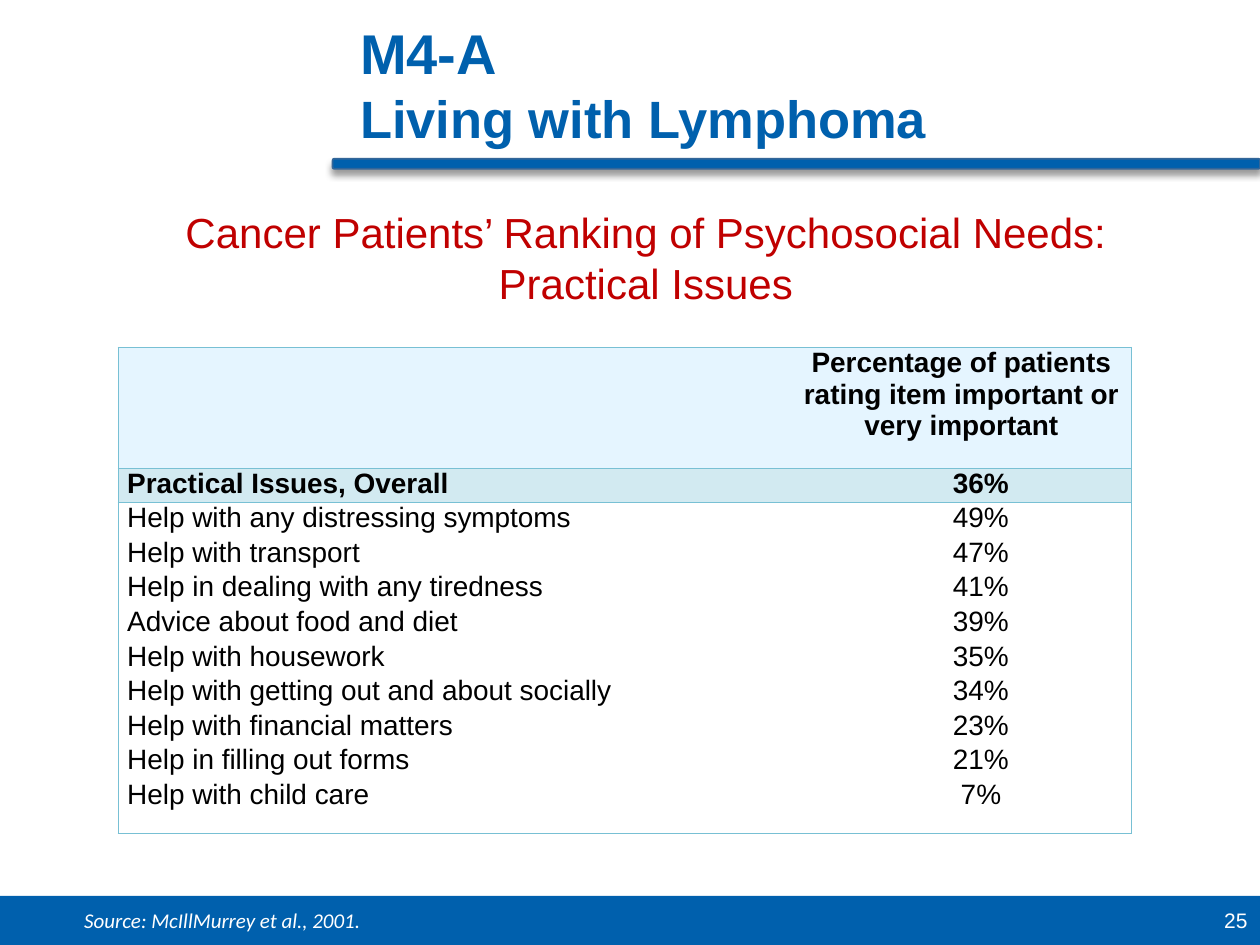
from lxml.etree import SubElement
from pptx import Presentation
from pptx.dml.color import RGBColor
from pptx.enum.shapes import MSO_SHAPE
from pptx.enum.text import MSO_ANCHOR, PP_ALIGN
from pptx.oxml.ns import qn
from pptx.util import Inches, Pt

HUES = {"blue": "0060AD", "edge": "336699", "red": "C00000", "white": "FFFFFF",
        "black": "000000", "rule": "78C0D4", "head": "E5F5FF", "band": "D2EAF1"}
NEEDS = [("Help with any distressing symptoms", "49%"), ("Help with transport", "47%"),
         ("Help in dealing with any tiredness", "41%"), ("Advice about food and diet", "39%"),
         ("Help with housework", "35%"), ("Help with getting out and about socially", "34%"),
         ("Help with financial matters", "23%"), ("Help in filling out forms", "21%"),
         ("Help with child care", "7%")]
ROWS = [("head", True, [""], ["Percentage of patients rating item important or very important"]),
        ("band", True, ["Practical Issues, Overall"], ["36%"]),
        (None, False, *zip(*NEEDS))]


def hue(name):
    return RGBColor.from_string(HUES[name])


class Deck:
    COLS, LINES = 100, 75
    FACE = {"name": "Arial", "size": 16, "color": "black", "bold": False, "italic": False}

    def __init__(self):
        self.file = Presentation()
        self.file.slide_width, self.file.slide_height = Inches(10), Inches(7.5)
        self.slide = self.file.slides.add_slide(self.file.slide_layouts[6])

    def across(self, cols):
        return int(self.file.slide_width * cols / self.COLS)

    def down(self, rows):
        return int(self.file.slide_height * rows / self.LINES)

    def place(self, x, y, w, h):
        return self.across(x), self.down(y), self.across(w), self.down(h)

    def style(self, font, **face):
        for key, val in {**self.FACE, **face}.items():
            if key == "color":
                font.color.rgb = hue(val)
            else:
                setattr(font, key, Pt(val) if key == "size" else val)

    def bar(self, box, kind=MSO_SHAPE.RECTANGLE, line=None):
        shape = self.slide.shapes.add_shape(kind, *self.place(*box))
        shape.shadow.inherit = False
        shape.fill.solid()
        shape.fill.fore_color.rgb = hue("blue")
        if line:
            shape.line.color.rgb = hue(line)
            shape.line.width = Pt(1)
        else:
            shape.line.fill.background()
        return shape

    def shade(self, shape):
        glow = shape._element.spPr.find(qn("a:effectLst"))
        cast = SubElement(glow, qn("a:outerShdw"), blurRad=str(Pt(4)), dist=str(Pt(3)),
                          dir="5400000", rotWithShape="0")
        tint = SubElement(cast, qn("a:srgbClr"), val=HUES["black"])
        SubElement(tint, qn("a:alpha"), val="40000")

    def text(self, box, runs, align=PP_ALIGN.LEFT, anchor=MSO_ANCHOR.MIDDLE):
        frame = self.slide.shapes.add_textbox(*self.place(*box)).text_frame
        frame.word_wrap = True
        frame.vertical_anchor = anchor
        para = frame.paragraphs[0]
        para.alignment = align
        for i, (words, face) in enumerate(runs):
            if i:
                para.add_line_break()
            run = para.add_run()
            run.text = words
            self.style(run.font, **face)

    def edge(self, cell, sides):
        props = cell._tc.get_or_add_tcPr()
        for side in "LRTB":
            line = SubElement(props, qn("a:ln" + side), w=str(Pt(1)))
            if side in sides:
                fill = SubElement(line, qn("a:solidFill"))
                SubElement(fill, qn("a:srgbClr"), val=HUES["rule"])
            else:
                SubElement(line, qn("a:noFill"))

    def cell(self, cell, items, fill, sides, align, bold, indent):
        self.edge(cell, sides)
        if fill:
            cell.fill.solid()
            cell.fill.fore_color.rgb = hue(fill)
        else:
            cell.fill.background()
        cell.margin_left = cell.margin_right = self.across(0.7)
        cell.margin_top = cell.margin_bottom = 0
        frame = cell.text_frame
        for i, words in enumerate(items):
            para = frame.add_paragraph() if i else frame.paragraphs[0]
            para.text = words
            para.alignment = align
            if i:
                para.space_before = Pt(2)
            if indent:
                props = para._p.get_or_add_pPr()
                props.set("marL", str(self.across(7.1)))
                props.set("indent", str(-self.across(4)))
            self.style(para.font, bold=bold)

    def table(self, x, y, wides, highs, rows):
        box = self.place(x, y, sum(wides), sum(highs))
        table = self.slide.shapes.add_table(len(rows), len(wides), *box).table
        table.first_row = table.horz_banding = False
        for col, wide in zip(table.columns, wides):
            col.width = self.across(wide)
        for r, (fill, bold, left, right) in enumerate(rows):
            table.rows[r].height = self.down(highs[r])
            self.cell(table.cell(r, 0), left, fill, "LTB", PP_ALIGN.JUSTIFY, bold, False)
            self.cell(table.cell(r, 1), right, fill, "RTB", PP_ALIGN.CENTER, bold, r > 0)


def main():
    deck = Deck()
    deck.bar((0, 71.1, 100, 3.9))
    deck.text((76.7, 71.1, 23.3, 3.9), [("25", {"size": 12, "color": "white"})], PP_ALIGN.RIGHT)
    deck.shade(deck.bar((26.4, 12.6, 73.6, 0.8), MSO_SHAPE.ROUNDED_RECTANGLE, "edge"))
    title = {"color": "blue", "bold": True}
    deck.text((27.6, 1.7, 72.4, 9.9), [("M4-A", {**title, "size": 32}),
                                       ("Living with Lymphoma", {**title, "size": 30})])
    deck.text((9.2, 16.2, 84.1, 8.4),
              [("Cancer Patients’ Ranking of Psychosocial Needs: Practical Issues",
                {"size": 24, "color": "red"})], PP_ALIGN.CENTER)
    deck.text((5.7, 71.5, 76.3, 3),
              [("Source: McIllMurrey et al., 2001.",
                {"name": "Calibri", "size": 12, "color": "white", "italic": True})],
              anchor=MSO_ANCHOR.TOP)
    deck.table(9.4, 27.6, (53.4, 27), (9.6, 2.6, 26.3), ROWS)
    deck.file.save("out.pptx")


if __name__ == "__main__":
    main()
